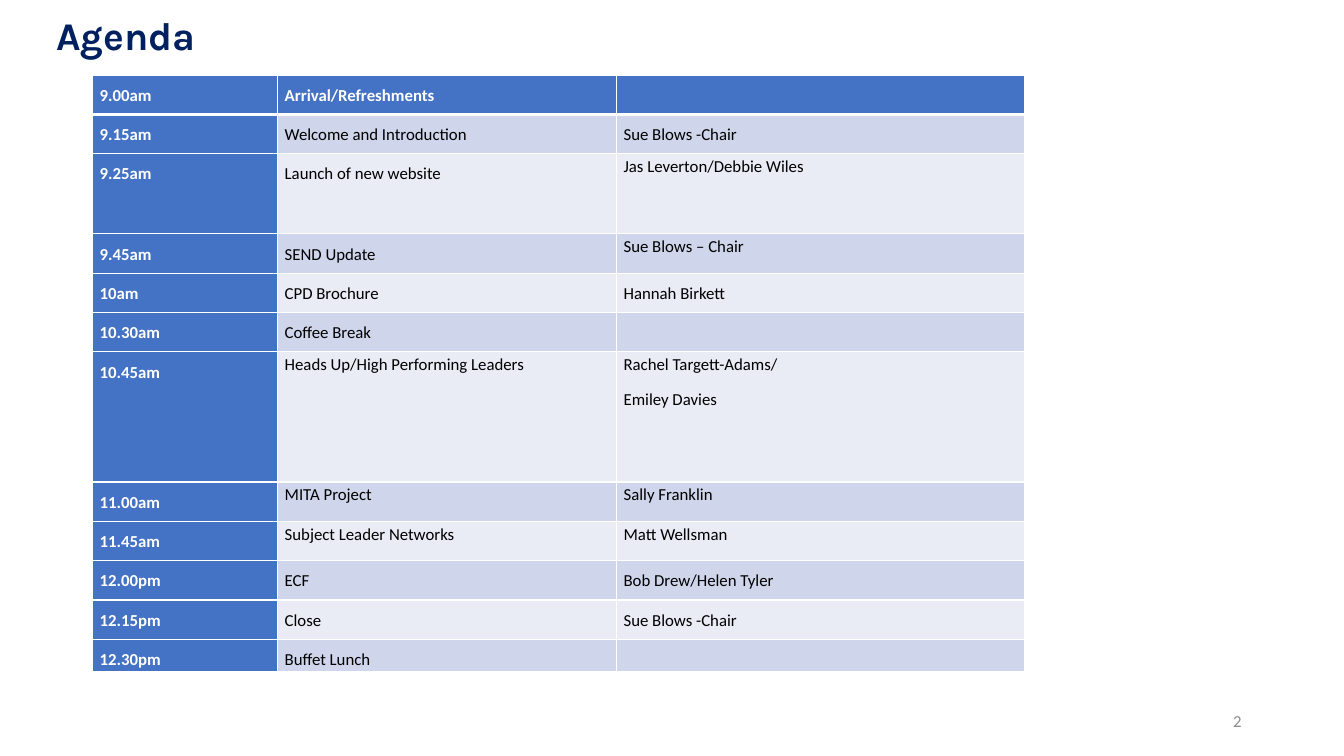
from pptx import Presentation
from pptx.dml.color import RGBColor
from pptx.enum import text
from pptx.oxml import parse_xml
from pptx.oxml.ns import nsdecls
from pptx.util import Pt

NAVY = RGBColor(0x00, 0x20, 0x60)
BLUE = RGBColor(0x44, 0x72, 0xC4)
BAND_DARK = RGBColor(0xCF, 0xD5, 0xEA)
BAND_LIGHT = RGBColor(0xE9, 0xEB, 0xF5)
WHITE = RGBColor(0xFF, 0xFF, 0xFF)
BLACK = RGBColor(0x00, 0x00, 0x00)
GREY = RGBColor(0x8C, 0x8C, 0x8C)

WIDE, TIGHT = 1.5, 1.15
ROW = 28.1
COLUMNS = [132.2, 242.1, 291.4]
AGENDA = [
    ("9.00am", "Arrival/Refreshments", "", WIDE, WIDE, ROW),
    ("9.15am", "Welcome and Introduction", "Sue Blows -Chair", WIDE, WIDE, ROW),
    ("9.25am", "Launch of new website", "Jas Leverton/Debbie Wiles", WIDE, TIGHT, 57.3),
    ("9.45am", "SEND Update", "Sue Blows – Chair", WIDE, TIGHT, ROW),
    ("10am", "CPD Brochure", "Hannah Birkett", WIDE, WIDE, ROW),
    ("10.30am", "Coffee Break", "", WIDE, WIDE, ROW),
    ("10.45am", "Heads Up/High Performing Leaders",
     "Rachel Targett-Adams/\nEmiley Davies", TIGHT, TIGHT, 92.9),
    ("11.00am", "MITA Project", "Sally Franklin", TIGHT, TIGHT, ROW),
    ("11.45am", "Subject Leader Networks", "Matt Wellsman", TIGHT, TIGHT, ROW),
    ("12.00pm", "ECF", "Bob Drew/Helen Tyler", WIDE, WIDE, ROW),
    ("12.15pm", "Close", "Sue Blows -Chair", WIDE, WIDE, ROW),
    ("12.30pm", "Buffet Lunch", "", WIDE, WIDE, 23),
]


def set_font(p, name, size, color, bold=False):
    p.font.name = name
    p.font.size = Pt(size)
    p.font.bold = bold
    p.font.color.rgb = color


def add_label(slide, content, left, top, width, height, font, size, color,
              bold=False, align=text.PP_ALIGN.LEFT):
    sp = slide.shapes.add_textbox(Pt(left), Pt(top), Pt(width), Pt(height))
    tf = sp.text_frame
    tf.word_wrap = True
    tf.vertical_anchor = text.MSO_ANCHOR.MIDDLE
    tf.margin_top = tf.margin_bottom = 0
    p = tf.paragraphs[0]
    p.text = content
    p.alignment = align
    set_font(p, font, size, color, bold)


def set_borders(cell, top, bottom):
    tc_pr = cell._tc.get_or_add_tcPr()
    for side, width in (("L", 1), ("R", 1), ("T", top), ("B", bottom)):
        tc_pr.append(parse_xml(
            f'<a:ln{side} {nsdecls("a")} w="{Pt(width)}"><a:solidFill>'
            f'<a:srgbClr val="{WHITE}"/></a:solidFill></a:ln{side}>'))


def fill_cell(cell, content, spacing, fill, color, bold):
    cell.margin_left = cell.margin_right = Pt(5)
    cell.margin_top = cell.margin_bottom = 0
    cell.fill.solid()
    cell.fill.fore_color.rgb = fill
    if not content:
        return
    cell.text = content
    for p in cell.text_frame.paragraphs:
        p.line_spacing = spacing
        p.space_after = Pt(8)
        set_font(p, "Calibri", 12, color, bold)


def add_agenda(slide, left, top):
    height = sum(entry[-1] for entry in AGENDA)
    table = slide.shapes.add_table(
        len(AGENDA), len(COLUMNS), Pt(left), Pt(top),
        Pt(sum(COLUMNS)), Pt(height)).table
    table.first_col = True
    for column, width in zip(table.columns, COLUMNS):
        column.width = Pt(width)
    for i, (time, topic, speaker, topic_gap, speaker_gap, h) in enumerate(AGENDA):
        table.rows[i].height = Pt(h)
        band = BAND_DARK if i % 2 else BAND_LIGHT
        cells = ((time, WIDE), (topic, topic_gap), (speaker, speaker_gap))
        for j, (content, spacing) in enumerate(cells):
            heading = i == 0 or j == 0
            cell = table.cell(i, j)
            set_borders(cell, 3 if i == 1 else 1, 3 if i == 0 else 1)
            fill_cell(cell, content, spacing, BLUE if heading else band,
                      WHITE if heading else BLACK, heading)


def main():
    prs = Presentation()
    prs.slide_width, prs.slide_height = Pt(960), Pt(540)
    slide = prs.slides.add_slide(prs.slide_layouts[6])
    add_label(slide, "Agenda", 33, 5, 900, 40, "Karla", 28, NAVY, bold=True)
    add_label(slide, "2", 678, 500.5, 216, 28.8, "Calibri", 12, GREY,
              align=text.PP_ALIGN.RIGHT)
    add_agenda(slide, 66.2, 53.6)
    prs.save("out.pptx")


if __name__ == "__main__":
    main()
